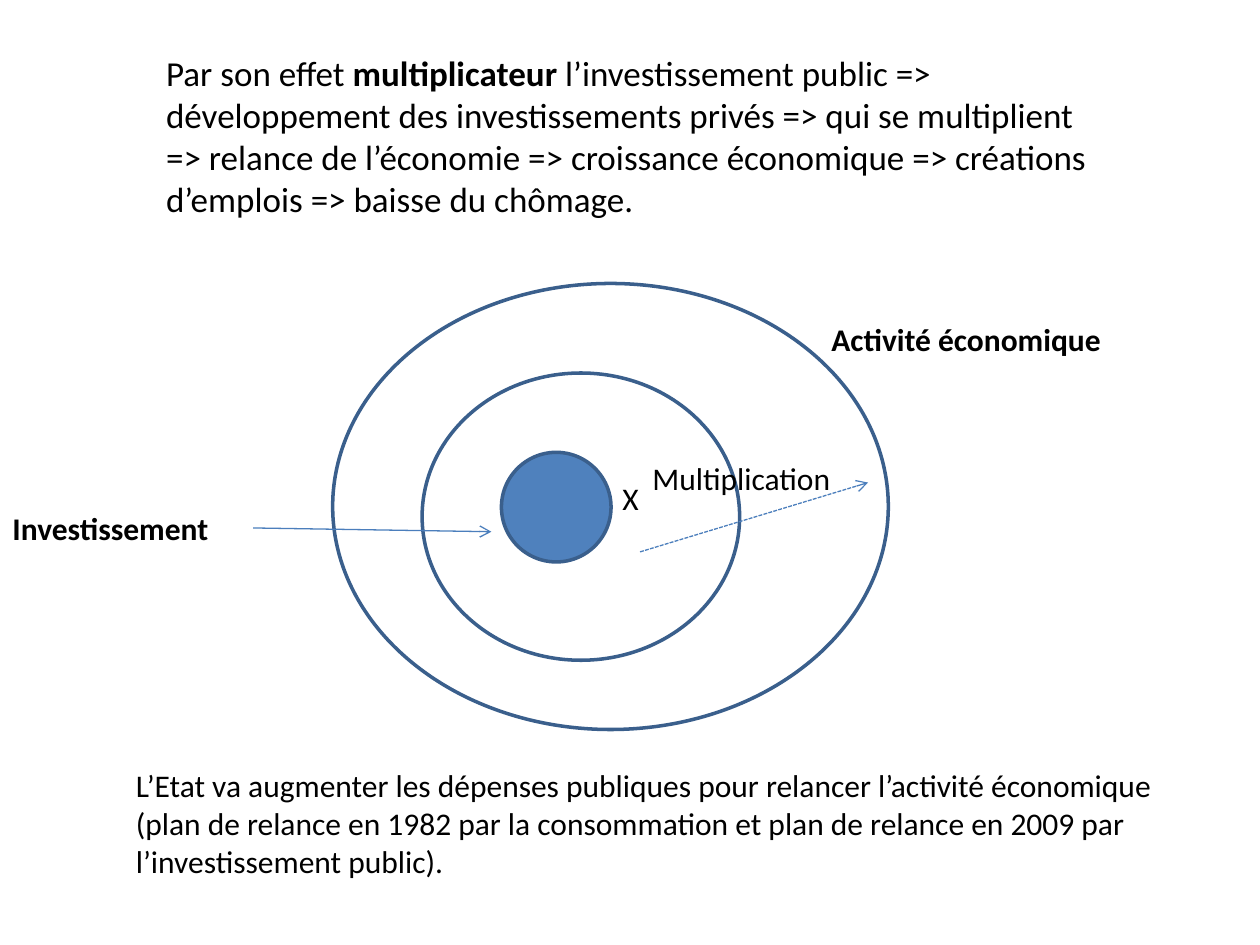
from dataclasses import dataclass

from lxml.etree import SubElement
from pptx import Presentation
from pptx.dml.color import RGBColor
from pptx.enum.dml import MSO_LINE
from pptx.enum.shapes import MSO_CONNECTOR, MSO_SHAPE
from pptx.enum.text import MSO_AUTO_SIZE
from pptx.oxml.ns import qn
from pptx.util import Inches, Pt


@dataclass(frozen=True)
class Theme:
    font: str = "Calibri"
    ink: str = "000000"
    core: str = "4F81BD"
    outline: str = "3A5F8C"
    arrow: str = "4B7EBC"
    intro_size: int = 20
    body_size: int = 18
    outline_width: float = 2
    arrow_width: float = 0.75


THEME = Theme()
WIDTH, HEIGHT = Inches(10), Inches(7.5)
LABEL_HEIGHT = 5.33

INTRO = [
    ("Par son effet", False),
    (" multiplicateur ", True),
    ("l’investissement public => développement des investissements privés "
     "=> qui se multiplient => relance de l’économie => croissance économique "
     "=> créations d’emplois => baisse du chômage.", False),
]
CONCLUSION = (
    "L’Etat va augmenter les dépenses publiques pour relancer l’activité "
    "économique (plan de relance en 1982 par la consommation et plan de "
    "relance en 2009 par l’investissement public)."
)
RINGS = [
    ((39.8, 47.87, 8.7, 11.6), THEME.core),
    ((33.5, 39.47, 25.2, 30.4), None),
    ((26.4, 30, 44.1, 47.2), None),
]
ARROWS = [
    ((20.1, 55.87, 39, 56.27), None),
    ((50.8, 58.4, 68.9, 51.07), MSO_LINE.SQUARE_DOT),
]
LABELS = [
    ("Investissement", (0, 53.2, 20.1), True),
    ("Activité économique", (65, 33.2, 25.2), True),
    ("X", (48.4, 50, 7.1), False),
    ("Multiplication", (50.8, 47.87, 16.4), False),
]


def place(percents):
    return [round(share / 100 * (HEIGHT if index % 2 else WIDTH))
            for index, share in enumerate(percents)]


def color(value):
    return RGBColor.from_string(value)


def add_text(slide, runs, box, size=THEME.body_size):
    shape = slide.shapes.add_textbox(*place(box))
    frame = shape.text_frame
    frame.word_wrap = True
    frame.auto_size = MSO_AUTO_SIZE.SHAPE_TO_FIT_TEXT
    paragraph = frame.paragraphs[0]
    for text, bold in runs:
        run = paragraph.add_run()
        run.text = text
        run.font.name = THEME.font
        run.font.size = Pt(size)
        run.font.bold = bold
        run.font.color.rgb = color(THEME.ink)


def add_ring(slide, box, fill):
    shape = slide.shapes.add_shape(MSO_SHAPE.OVAL, *place(box))
    shape.shadow.inherit = False
    if fill:
        shape.fill.solid()
        shape.fill.fore_color.rgb = color(fill)
    else:
        shape.fill.background()
    shape.line.color.rgb = color(THEME.outline)
    shape.line.width = Pt(THEME.outline_width)


def add_arrow(slide, ends, dash):
    connector = slide.shapes.add_connector(MSO_CONNECTOR.STRAIGHT, *place(ends))
    connector.line.color.rgb = color(THEME.arrow)
    connector.line.width = Pt(THEME.arrow_width)
    if dash:
        connector.line.dash_style = dash
    properties = connector._element.spPr
    SubElement(properties.find(qn("a:ln")), qn("a:tailEnd"), type="arrow")
    SubElement(properties, qn("a:effectLst"))


def main():
    presentation = Presentation()
    presentation.slide_width, presentation.slide_height = WIDTH, HEIGHT
    slide = presentation.slides.add_slide(presentation.slide_layouts[6])
    add_text(slide, INTRO, (12.2, 4.8, 76.4, 19.33), size=THEME.intro_size)
    for box, fill in RINGS:
        add_ring(slide, box, fill)
    for ends, dash in ARROWS:
        add_arrow(slide, ends, dash)
    for text, corner_and_width, bold in LABELS:
        add_text(slide, [(text, bold)], (*corner_and_width, LABEL_HEIGHT))
    add_text(slide, [(CONCLUSION, False)], (9.8, 80.4, 82.7, 13.47))
    presentation.save("out.pptx")


if __name__ == "__main__":
    main()
